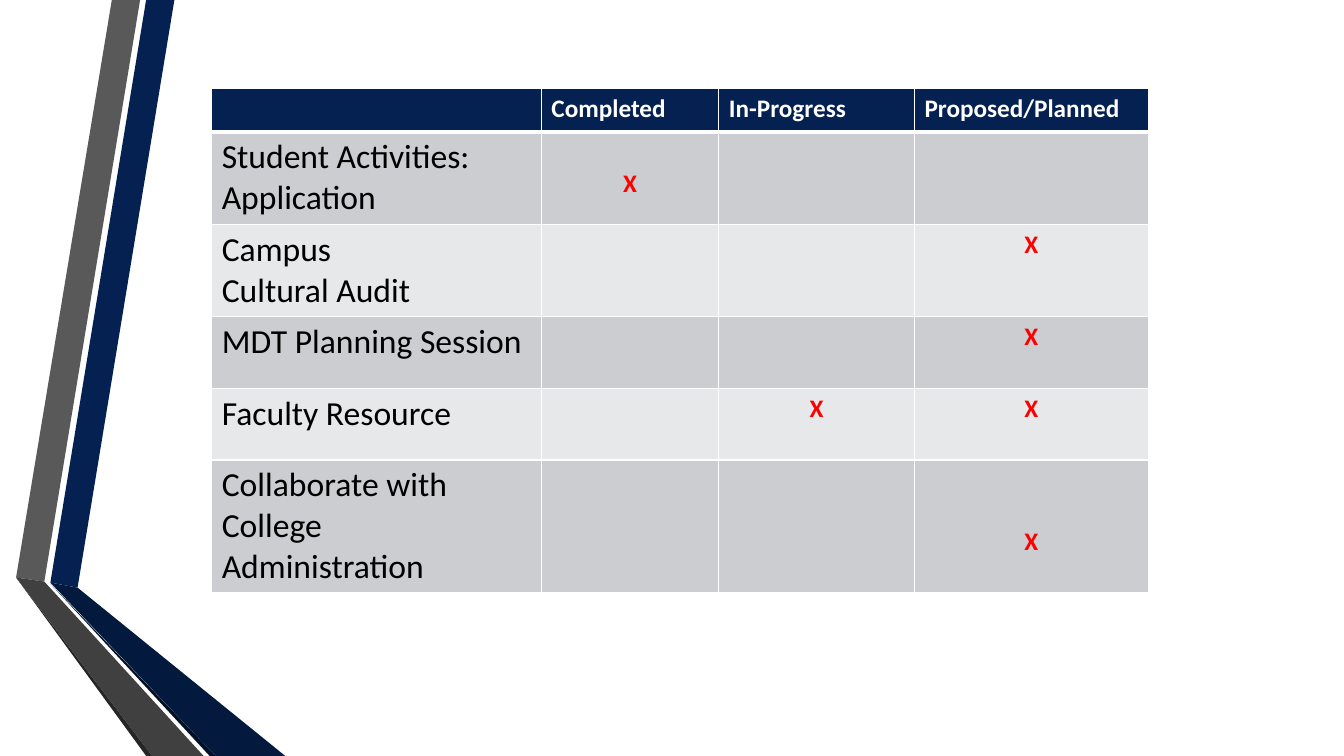
import pptx
import pptx.util
import pptx.oxml
import pptx.dml.color
import pptx.enum.text
from pptx.util import Inches, Pt

COLORS = {
    "navy": "042151", "navy_dark": "03193D", "navy_edge": "021028",
    "gray": "595959", "gray_dark": "404040", "gray_edge": "262626",
    "band_dark": "CCCDD0", "band_light": "E7E8E9",
    "white": "FFFFFF", "black": "000000", "red": "FF0000",
}
NS = "http://schemas.openxmlformats.org/drawingml/2006/main"


def rgb(name):
    return pptx.dml.color.RGBColor.from_string(COLORS[name])


def format_cell(cell, fill, bottom):
    tcPr = cell._tc.get_or_add_tcPr()
    for side, width in {"L": 1, "R": 1, "T": 1, "B": bottom}.items():
        tcPr.append(pptx.oxml.parse_xml(
            f'<a:ln{side} xmlns:a="{NS}" w="{Pt(width)}"><a:solidFill>'
            f'<a:srgbClr val="{COLORS["white"]}"/></a:solidFill></a:ln{side}>'))
    cell.fill.solid()
    cell.fill.fore_color.rgb = rgb(fill)


prs = pptx.Presentation()
prs.slide_width, prs.slide_height = Inches(13.33), Inches(7.5)
s = prs.slides.add_slide(prs.slide_layouts[6])

ribbons = [
    ("navy", [(0.5, 5.78), (0.77, 5.83), (1.73, 0), (1.45, 0)]),
    ("gray", [(1.39, 0), (1.11, 0), (0.16, 5.73), (0.44, 5.77)]),
    ("gray_edge", [(0.16, 5.73), (1.45, 7.5), (1.51, 7.5)]),
    ("navy_edge", [(0.5, 5.79), (2.08, 7.5), (2.14, 7.5)]),
    ("navy_dark", [(0.5, 5.78), (2.14, 7.5), (2.83, 7.5), (0.77, 5.83)]),
    ("gray_dark", [(2.02, 7.5), (0.44, 5.77), (0.16, 5.73), (1.51, 7.5)]),
]
for color, corners in ribbons:
    points = [(Inches(x), Inches(y)) for x, y in corners]
    builder = s.shapes.build_freeform(*points[0], scale=1.0)
    builder.add_line_segments(points[1:], close=True)
    sp = builder.convert_to_shape()
    sp.shadow.inherit = False
    sp.fill.solid()
    sp.fill.fore_color.rgb = rgb(color)
    sp.line.fill.background()

rows = [
    ("", "Completed", "In-Progress", "Proposed/Planned"),
    ("Student Activities:\nApplication", "X", "", ""),
    ("Campus\nCultural Audit", "", "", "X"),
    ("MDT Planning Session", "", "", "X"),
    ("Faculty Resource", "", "X", "X"),
    ("Collaborate with College Administration", "", "", "X"),
]
widths = [3.27, 1.76, 1.94, 2.32]
heights = [0.43, 0.91, 0.92, 0.71, 0.71, 1.32]
mark_margins = {1: 0.36, 5: 0.66}
formats = {
    "header": {"size": Pt(18), "bold": True, "color": "white"},
    "task": {"size": Pt(24), "bold": False, "color": "black"},
    "mark": {"size": Pt(18), "bold": True, "color": "red"},
}

tbl = s.shapes.add_table(len(rows), len(widths), Inches(2.1), Inches(0.88),
                         Inches(sum(widths)), Inches(sum(heights))).table
for column, width in zip(tbl.columns, widths):
    column.width = Inches(width)
for i, (row, height) in enumerate(zip(rows, heights)):
    tbl.rows[i].height = Inches(height)
    fill = "navy" if i == 0 else "band_dark" if i % 2 else "band_light"
    for j, text in enumerate(row):
        cell = tbl.cell(i, j)
        format_cell(cell, fill, 3 if i == 0 else 1)
        if not text:
            continue
        kind = "header" if i == 0 else "mark" if j else "task"
        tf = cell.text_frame
        tf.text = text
        if kind == "mark":
            cell.margin_top = Inches(mark_margins.get(i, 0.05))
            tf.paragraphs[0].alignment = pptx.enum.text.PP_ALIGN.CENTER
        for p in tf.paragraphs:
            for r in p.runs:
                r.font.name = "Calibri"
                for key, value in formats[kind].items():
                    if key == "color":
                        r.font.color.rgb = rgb(value)
                    else:
                        setattr(r.font, key, value)

prs.save("out.pptx")
